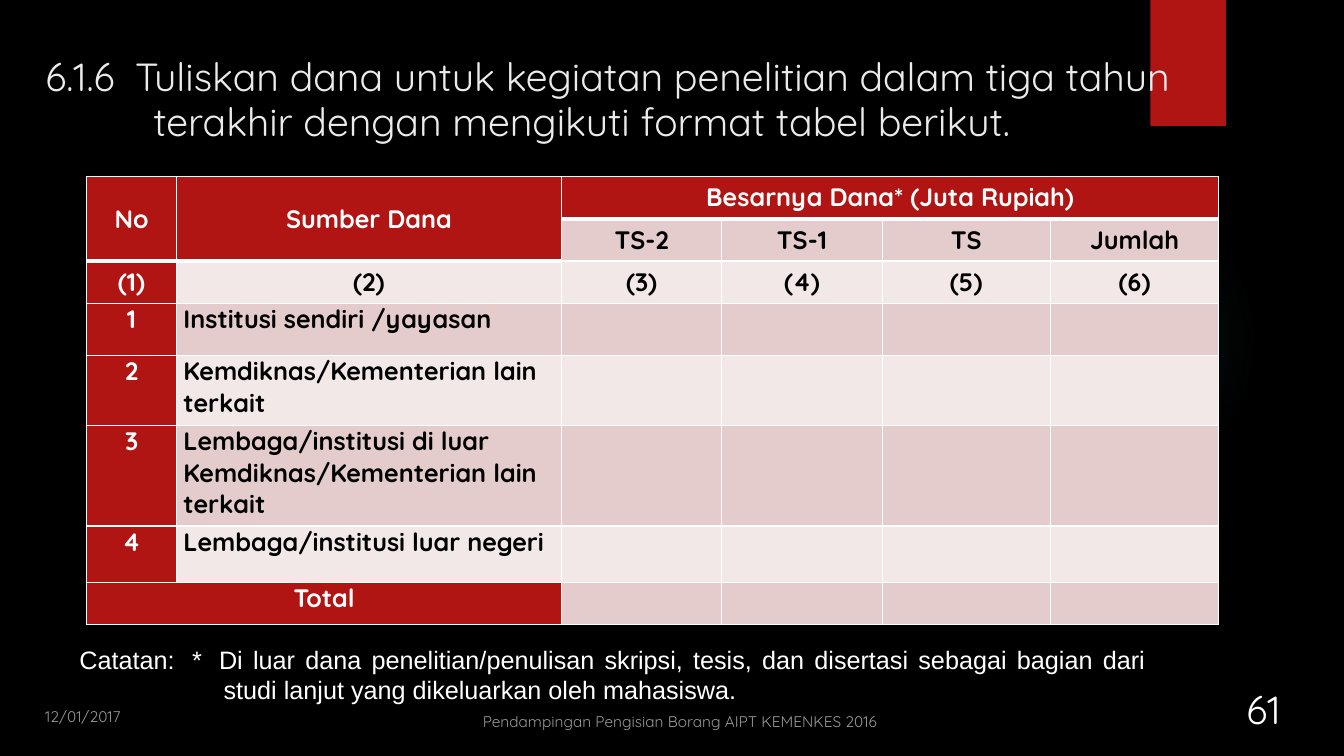
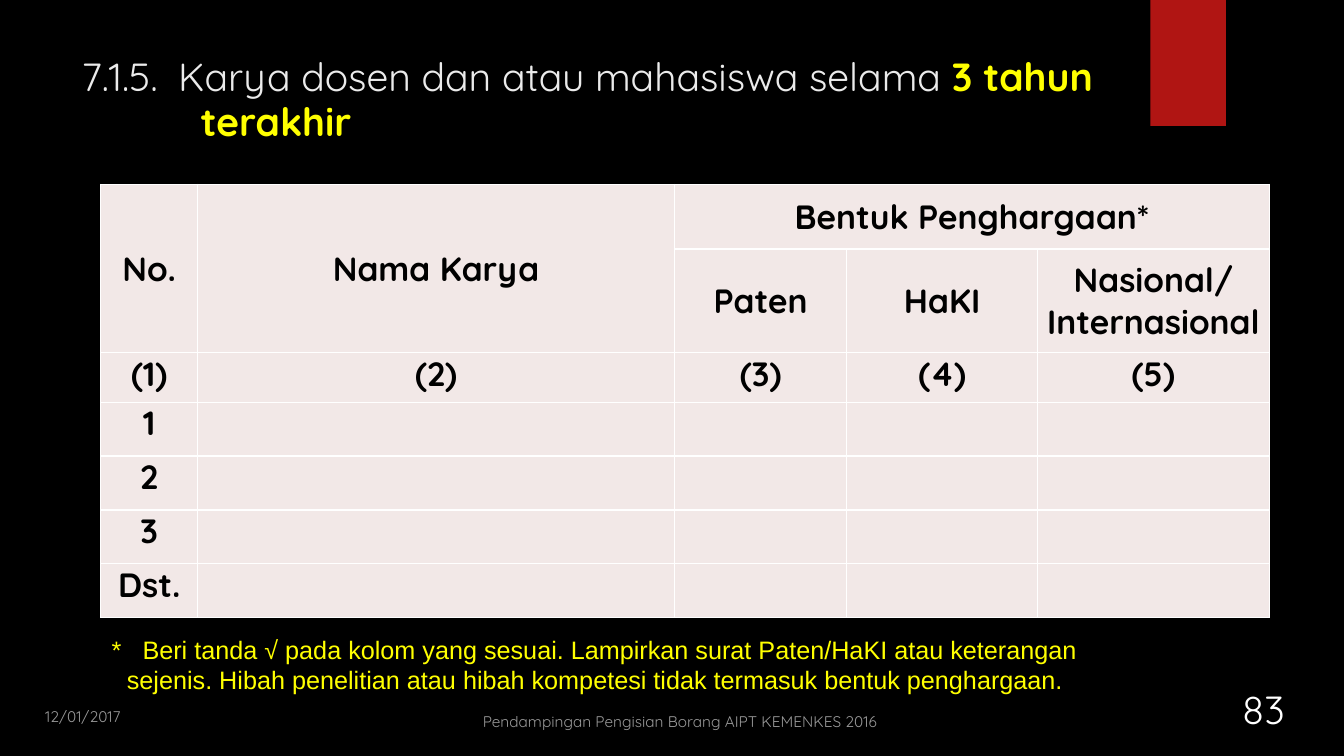
from lxml import etree
from pptx import Presentation
from pptx.dml.color import RGBColor
from pptx.enum import shapes, text
from pptx.oxml import ns, parse_xml
from pptx.util import Inches, Pt

BLACK = RGBColor(0x00, 0x00, 0x00)
WHITE = RGBColor(0xFF, 0xFF, 0xFF)
PALE_WHITE = RGBColor(0xEB, 0xEB, 0xEB)
YELLOW = RGBColor(0xFF, 0xFF, 0x00)
RED = RGBColor(0xB0, 0x15, 0x13)
ROSE = RGBColor(0xE4, 0xCC, 0xCC)
BLUSH = RGBColor(0xF2, 0xE8, 0xE7)
GLOW = "50B9C1"
HEADING_FONT, NOTE_FONT = "Quicksand", "Arial"
TOP, MIDDLE, BOTTOM = (text.MSO_ANCHOR.TOP, text.MSO_ANCHOR.MIDDLE,
                       text.MSO_ANCHOR.BOTTOM)
LEFT, CENTER, JUSTIFY = (text.PP_ALIGN.LEFT, text.PP_ALIGN.CENTER,
                         text.PP_ALIGN.JUSTIFY)
FOOTER = "Pendampingan Pengisian Borang AIPT KEMENKES 2016"
DATE = "12/01/2017"

# Pieces of a title or note are set apart by a wide space.
# Merges are (first row, first column, last row, last column).
SLIDES = [
    dict(
        number="61",
        title=["6.1.6", "Tuliskan dana untuk kegiatan penelitian dalam tiga tahun "
               "terakhir dengan mengikuti format tabel berikut."],
        emphasis="",
        title_at=(0.35, 0.5, 11.74, 1.1), title_indent=(1.07, -1.07),
        table_at=(0.86, 1.75),
        columns=[0.89, 3.82, 1.59, 1.59, 1.67, 1.67],
        heights=[0.42, 0.42, 0.42, 0.52, 0.69, 1, 0.56, 0.42],
        rows=[
            ["No", "Sumber Dana", "Besarnya Dana* (Juta Rupiah)"],
            ["", "", "TS-2", "TS-1", "TS", "Jumlah"],
            ["(1)", "(2)", "(3)", "(4)", "(5)", "(6)"],
            ["1", "Institusi sendiri /yayasan"],
            ["2", "Kemdiknas/Kementerian lain terkait"],
            ["3", "Lembaga/institusi di luar Kemdiknas/Kementerian lain terkait"],
            ["4", "Lembaga/institusi luar negeri"],
            ["Total"],
        ],
        merges=[(0, 0, 1, 0), (0, 1, 1, 1), (0, 2, 0, 5), (7, 0, 7, 1)],
        table_size=18, middle_rows=3, banded=True,
        note=["Catatan:", "*", "Di luar dana penelitian/penulisan skripsi, tesis, dan "
              "disertasi sebagai bagian dari studi lanjut yang dikeluarkan oleh "
              "mahasiswa."],
        note_at=(0.5, 6.34, 10.96, 0.71), note_indent=(1.62, -1.43),
        note_gap=5, note_align=JUSTIFY, note_color=WHITE,
    ),
    dict(
        number="83",
        title=["7.1.5.", "Karya dosen dan atau mahasiswa selama "],
        emphasis="3 tahun terakhir",
        title_at=(0.71, 0.5, 11.25, 1.12), title_indent=(1.18, -1.18),
        table_at=(1, 1.83),
        columns=[0.96, 4.73, 1.71, 1.89, 2.3],
        heights=[0.64, 1.03, 0.49] + [0.535] * 4,
        rows=[
            ["No.", "Nama Karya", "Bentuk Penghargaan*"],
            ["", "", "Paten", "HaKI", "Nasional/ Internasional"],
            ["(1)", "(2)", "(3)", "(4)", "(5)"],
            ["1"], ["2"], ["3"], ["Dst."],
        ],
        merges=[(0, 0, 1, 0), (0, 1, 1, 1), (0, 2, 0, 4)],
        table_size=24, middle_rows=2, banded=False,
        note=["*", "Beri tanda √ pada kolom yang sesuai. Lampirkan surat Paten/HaKI "
              "atau keterangan sejenis. Hibah penelitian atau hibah kompetesi tidak "
              "termasuk bentuk penghargaan."],
        note_at=(0.57, 6.24, 10.77, 0.71), note_indent=(0.59, -0.15),
        note_gap=10, note_align=LEFT, note_color=YELLOW,
    ),
]


def set_font(font, name, size, color, bold=False):
    font.name, font.size, font.bold = name, Pt(size), bold
    font.color.rgb = color


def set_indent(para, left, first):
    props = para._p.get_or_add_pPr()
    props.set("marL", str(Inches(left)))
    props.set("indent", str(Inches(first)))


def write_pieces(para, pieces, gap):
    """Write the pieces with one space, widened by gap points, between them."""
    for index, piece in enumerate(pieces):
        if index:
            space = para.add_run()
            space.text = " "
            space.font._element.set("spc", str(gap * 100))
        para.add_run().text = piece


def add_box(page, at, anchor=TOP, align=LEFT):
    """Add an empty text box and return its paragraph."""
    frame = page.shapes.add_textbox(*map(Inches, at)).text_frame
    frame.word_wrap = True
    frame.vertical_anchor = anchor
    para = frame.paragraphs[0]
    para.alignment = align
    return para


def add_decor(page, layout):
    """Draw the glow and the red tab, and move them to the layout."""
    shape_kind = shapes.MSO_SHAPE
    glow = page.shapes.add_shape(shape_kind.OVAL, *map(Inches, (9.41, 1.83, 3.08, 3.08)))
    stops = "".join(
        f'<a:gs pos="{pos}000"><a:srgbClr val="{GLOW}"><a:alpha val="{alpha}000"/>'
        "</a:srgbClr></a:gs>" for pos, alpha in ((0, 7), (36, 6), (69, 0)))
    glow.fill.gradient()
    old_fill = glow.element.spPr.find(ns.qn("a:gradFill"))
    old_fill.getparent().replace(old_fill, parse_xml(
        f'<a:gradFill {ns.nsdecls("a")}><a:gsLst>{stops}</a:gsLst><a:path path="circle">'
        '<a:fillToRect l="50000" t="50000" r="50000" b="50000"/></a:path></a:gradFill>'))
    tab = page.shapes.add_shape(shape_kind.RECTANGLE, *map(Inches, (11.41, 0, 0.75, 1.25)))
    tab.fill.solid()
    tab.fill.fore_color.rgb = RED
    tree = layout.placeholders[0].element.getparent()
    for index, shape in enumerate((glow, tab), start=2):
        shape.line.fill.background()
        shape.shadow.inherit = False
        tree.insert(index, shape.element)


def add_title(page, content):
    title = page.shapes.title
    title.left, title.top, title.width, title.height = map(Inches, content["title_at"])
    frame = title.text_frame
    frame.auto_size = text.MSO_AUTO_SIZE.NONE
    frame.word_wrap = True
    frame.vertical_anchor = TOP
    para = frame.paragraphs[0]
    para.alignment = LEFT
    para.line_spacing = 0.96
    set_indent(para, *content["title_indent"])
    set_font(para.font, HEADING_FONT, 28, PALE_WHITE)
    write_pieces(para, content["title"], gap=7)
    if content["emphasis"]:
        span = para.add_run()
        span.text = content["emphasis"]
        span.font.bold = True
        span.font.color.rgb = YELLOW


def set_borders(cell, top, bottom):
    """Give the cell white edges; top and bottom widths are in points."""
    props = cell._tc.get_or_add_tcPr()
    for index, (side, width) in enumerate(
            (("lnL", 1), ("lnR", 1), ("lnT", top), ("lnB", bottom))):
        edge = etree.Element(ns.qn(f"a:{side}"), w=str(Pt(width)))
        fill = etree.SubElement(edge, ns.qn("a:solidFill"))
        etree.SubElement(fill, ns.qn("a:srgbClr"), val=str(WHITE))
        props.insert(index, edge)


def format_cell(cell, row, col, content):
    banded = content["banded"]
    is_header = banded and (row == 0 or col == 0)
    cell.margin_left = cell.margin_right = Inches(0.07)
    cell.margin_top = cell.margin_bottom = 0
    cell.vertical_anchor = MIDDLE if row < content["middle_rows"] else TOP
    cell.fill.solid()
    band = ROSE if banded and row % 2 else BLUSH
    cell.fill.fore_color.rgb = RED if is_header else band
    header_end = 1 if col < 2 else 0
    heavy_bottom = banded and row in (0, header_end)
    heavy_top = banded and row == header_end + 1
    set_borders(cell, 3 if heavy_top else 1, 3 if heavy_bottom else 1)
    para = cell.text_frame.paragraphs[0]
    para.alignment = LEFT if col == 1 and row > 2 else CENTER
    set_font(para.font, HEADING_FONT, content["table_size"],
             WHITE if is_header else BLACK, bold=True)


def add_grid(page, content):
    columns, heights, rows = content["columns"], content["heights"], content["rows"]
    size = (sum(columns), sum(heights))
    table = page.shapes.add_table(len(rows), len(columns),
                                  *map(Inches, content["table_at"] + size)).table
    table.first_row = table.horz_banding = False
    for col, width in enumerate(columns):
        table.columns[col].width = Inches(width)
    for row, labels in enumerate(rows):
        table.rows[row].height = Inches(heights[row])
        for col in range(len(columns)):
            cell = table.cell(row, col)
            if col < len(labels):
                cell.text = labels[col]
            format_cell(cell, row, col, content)
    for top, left, bottom, right in content["merges"]:
        table.cell(top, left).merge(table.cell(bottom, right))


def add_note(page, content):
    para = add_box(page, content["note_at"], align=content["note_align"])
    set_indent(para, *content["note_indent"])
    set_font(para.font, NOTE_FONT, 18, content["note_color"])
    write_pieces(para, content["note"], content["note_gap"])


def add_footer(page, number):
    para = add_box(page, (12.07, 6.47, 0.92, 0.84), BOTTOM, CENTER)
    para.text = number
    set_font(para.font, HEADING_FONT, 28, WHITE)
    for label, at, anchor in ((FOOTER, (4.69, 6.97, 4.22, 0.33), BOTTOM),
                              (DATE, (0.35, 6.97, 1.08, 0.33), TOP)):
        para = add_box(page, at, anchor)
        para.text = label
        set_font(para.font, HEADING_FONT, 11, WHITE)
        for color in para._p.iter(ns.qn("a:srgbClr")):
            etree.SubElement(color, ns.qn("a:alpha"), val="60000")


def main():
    deck = Presentation()
    deck.slide_width, deck.slide_height = Inches(13.33), Inches(7.5)
    background = deck.slide_master.background.fill
    background.solid()
    background.fore_color.rgb = BLACK
    layout = deck.slide_layouts.get_by_name("Title Only")
    for index, content in enumerate(SLIDES):
        page = deck.slides.add_slide(layout)
        if index == 0:
            add_decor(page, layout)
        add_title(page, content)
        add_grid(page, content)
        add_note(page, content)
        add_footer(page, content["number"])
    deck.save("out.pptx")


if __name__ == "__main__":
    main()
